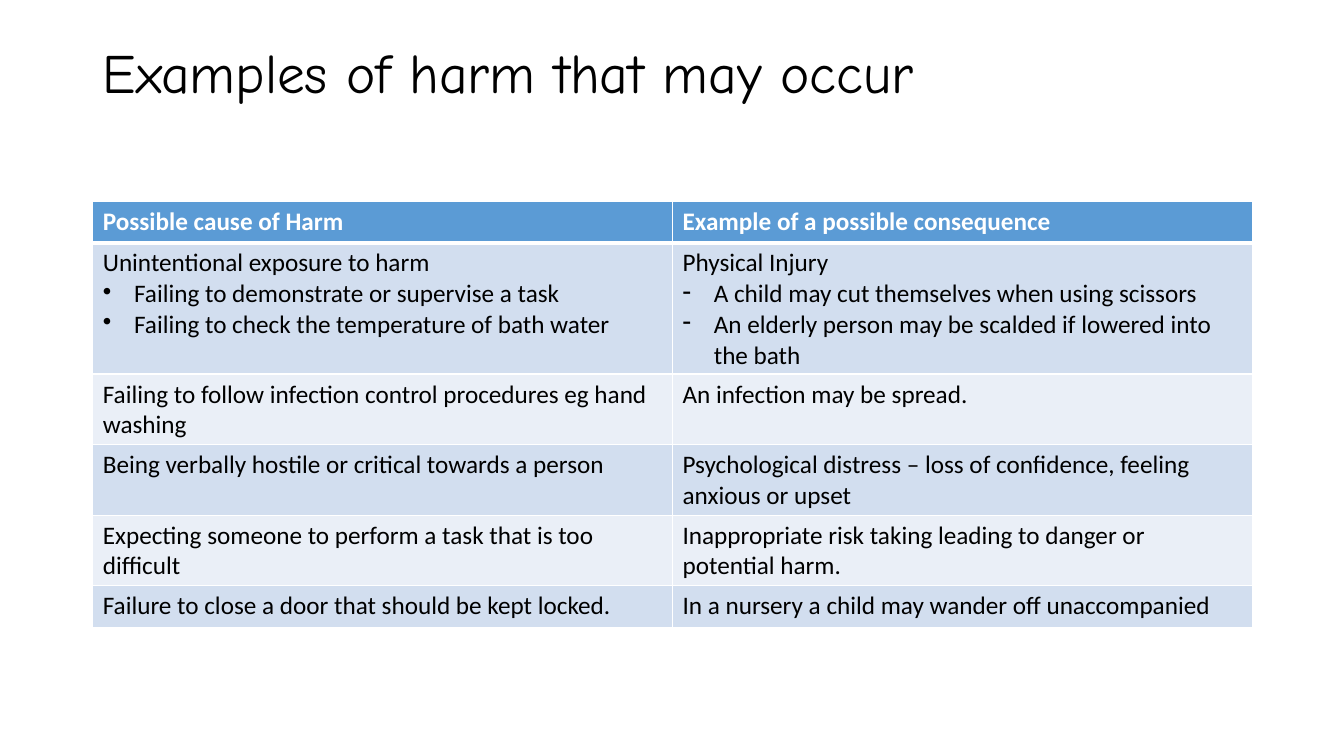
import dataclasses

import lxml.etree
import pptx
import pptx.dml.color
import pptx.enum.text
import pptx.oxml.ns
import pptx.util


@dataclasses.dataclass(frozen=True)
class Theme:
    title_font: str = "Comic Neue"
    body_font: str = "Calibri"
    title_size: float = 39.6
    body_size: float = 18
    ink: str = "000000"
    white: str = "FFFFFF"
    header: str = "5B9BD5"
    bands: tuple = ("D2DEEF", "EAEFF7")
    border: float = 1
    header_border: float = 3


PX = 9144
BULLET_INDENT = 31
HEADINGS = ("Possible cause of Harm", "Example of a possible consequence")
HARMS = (
    (
        ("Unintentional exposure to harm",
         "• Failing to demonstrate or supervise a task",
         "• Failing to check the temperature of bath water"),
        ("Physical Injury",
         "- A child may cut themselves when using scissors",
         "- An elderly person may be scalded if lowered into the bath"),
    ),
    (
        ("Failing to follow infection control procedures eg hand washing",),
        ("An infection may be spread.",),
    ),
    (
        ("Being verbally hostile or critical towards a person",),
        ("Psychological distress – loss of confidence, feeling anxious or upset",),
    ),
    (
        ("Expecting someone to perform a task that is too difficult",),
        ("Inappropriate risk taking leading to danger or potential harm.",),
    ),
    (
        ("Failure to close a door that should be kept locked.",),
        ("In a nursery a child may wander off unaccompanied",),
    ),
)


def add_element(parent, tag, **attributes):
    return lxml.etree.SubElement(parent, pptx.oxml.ns.qn(tag), attributes)


def rgb(colour):
    return pptx.dml.color.RGBColor.from_string(colour)


def write(paragraph, text, *, font, size, colour, bold=False, spacing=None):
    if text[:2] in ("• ", "- "):
        mark, text = text.split(" ", 1)
        properties = paragraph._p.get_or_add_pPr()
        properties.set("marL", str(BULLET_INDENT * PX))
        properties.set("indent", str(-BULLET_INDENT * PX))
        add_element(properties, "a:buChar", char=mark)
    if spacing:
        paragraph.line_spacing = spacing
    run = paragraph.add_run()
    run.text = text
    run.font.name = font
    run.font.size = pptx.util.Pt(size)
    run.font.bold = bold
    run.font.color.rgb = rgb(colour)


class SlideBuilder:
    """Draw styled elements, measured in px, on the current slide."""

    def __init__(self, presentation, theme):
        self.theme = theme
        self.slide = presentation.slides.add_slide(presentation.slide_layouts[6])

    def title(self, text, left, top, width, height):
        box = self.slide.shapes.add_textbox(*(PX * n for n in (left, top, width, height)))
        frame = box.text_frame
        frame.word_wrap = True
        frame.vertical_anchor = pptx.enum.text.MSO_ANCHOR.MIDDLE
        write(frame.paragraphs[0], text, font=self.theme.title_font,
              size=self.theme.title_size, colour=self.theme.ink, spacing=0.9)

    def table(self, headings, rows, left, top, width, height, row_height):
        shape = self.slide.shapes.add_table(
            len(rows) + 1, len(headings), *(PX * n for n in (left, top, width, height)))
        table = shape.table
        for row in table.rows:
            row.height = row_height * PX
        for column, heading in enumerate(headings):
            self.cell(table.cell(0, column), (heading,), self.theme.header, is_header=True)
        for index, row in enumerate(rows):
            fill = self.theme.bands[index % len(self.theme.bands)]
            for column, lines in enumerate(row):
                self.cell(table.cell(index + 1, column), lines, fill)

    def cell(self, cell, lines, fill, is_header=False):
        theme = self.theme
        properties = cell._tc.get_or_add_tcPr()
        for side in "LRTB":
            thick = is_header and side == "B"
            weight = theme.header_border if thick else theme.border
            line = add_element(properties, f"a:ln{side}", w=str(int(pptx.util.Pt(weight))))
            add_element(add_element(line, "a:solidFill"), "a:srgbClr", val=theme.white)
        cell.fill.solid()
        cell.fill.fore_color.rgb = rgb(fill)
        frame = cell.text_frame
        for index, text in enumerate(lines):
            paragraph = frame.add_paragraph() if index else frame.paragraphs[0]
            write(paragraph, text, font=theme.body_font, size=theme.body_size,
                  colour=theme.white if is_header else theme.ink, bold=is_header)


def main():
    presentation = pptx.Presentation()
    presentation.slide_width = 1333 * PX
    presentation.slide_height = 750 * PX
    builder = SlideBuilder(presentation, Theme())
    builder.title("Examples of harm that may occur", 92, 40, 1150, 70)
    builder.table(HEADINGS, HARMS, 92, 200, 1150, 421, row_height=41)
    presentation.save("out.pptx")


if __name__ == "__main__":
    main()
